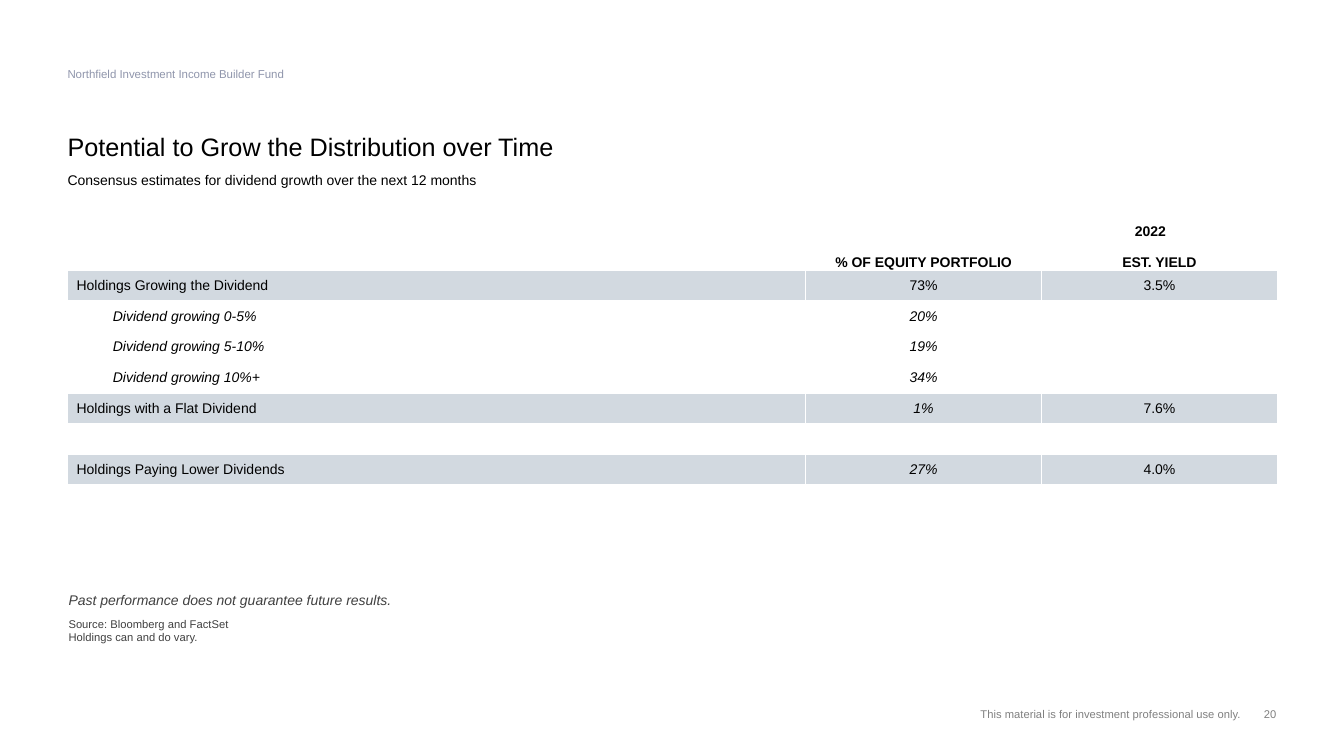
from pptx import Presentation
from pptx.dml.color import RGBColor
from pptx.enum.text import MSO_ANCHOR, PP_ALIGN
from pptx.util import Inches, Pt

TOP, MIDDLE, BOTTOM = MSO_ANCHOR.TOP, MSO_ANCHOR.MIDDLE, MSO_ANCHOR.BOTTOM
LEFT, CENTER, RIGHT = PP_ALIGN.LEFT, PP_ALIGN.CENTER, PP_ALIGN.RIGHT
WIDTH, HEIGHT = 13.33, 7.5
MARGIN = 0.67
BAND, PLAIN = "D2D9E0", "FFFFFF"
BLACK, DARK, GRAY, SLATE = "000000", "404040", "808080", "9096AC"

TEXTS = [
    ("Northfield Investment Income Builder Fund", (MARGIN, 0.67, 4, 0.14), TOP, LEFT, SLATE, {"size": 8.2}),
    ("Potential to Grow the Distribution over Time", (MARGIN, 1.33, 9.34, 0.27), BOTTOM, LEFT, BLACK, {"size": 18}),
    ("Consensus estimates for dividend growth over the next 12 months", (MARGIN, 1.7, 9.34, 0.18), TOP, LEFT, BLACK, {"size": 10}),
    ("Past performance does not guarantee future results.", (0.68, 5.91, 11.56, 0.13), BOTTOM, LEFT, DARK, {"size": 10, "italic": True}),
    ("Source: Bloomberg and FactSet\vHoldings can and do vary.", (0.68, 6.12, 11.56, 0.2), TOP, LEFT, DARK, {"size": 8}),
    ("This material is for investment professional use only.", (6.67, 6.95, 5.64, 0.2), BOTTOM, RIGHT, GRAY, {"size": 8}),
    ("20", (12.3, 6.95, 0.36, 0.2), BOTTOM, RIGHT, GRAY, {"size": 8}),
]

HEADERS = [("", "% OF EQUITY PORTFOLIO", "2022"), ("", "", "EST. YIELD")]
HOLDINGS = [
    ("Holdings Growing the Dividend", "73%", "3.5%"),
    ("Dividend growing 0-5%", "20%", ""),
    ("Dividend growing 5-10%", "19%", ""),
    ("Dividend growing 10%+", "34%", ""),
    ("Holdings with a Flat Dividend", "1%", "7.6%"),
    ("", "", ""),
    ("Holdings Paying Lower Dividends", "27%", "4.0%"),
]
COLUMNS = [7.32, 2.34, 2.34]
ROWS = [0.2, 0.28] + [0.3] * len(HOLDINGS)
TABLE_TOP = 2.18
YEAR_SHIFT = 0.18


def color(value):
    return RGBColor.from_string(value)


def write(text_frame, text, alignment, text_color, formats):
    paragraph = text_frame.paragraphs[0]
    paragraph.text = text
    paragraph.alignment = alignment
    for run in paragraph.runs:
        for name, value in {"name": "Arial", **formats}.items():
            setattr(run.font, name, Pt(value) if name == "size" else value)
        run.font.color.rgb = color(text_color)


def set_margins(target, left=0, right=0):
    target.margin_left, target.margin_right = Inches(left), Inches(right)
    target.margin_top = target.margin_bottom = 0


def add_text(slide, text, box, anchor, alignment, text_color, formats):
    text_frame = slide.shapes.add_textbox(*map(Inches, box)).text_frame
    text_frame.word_wrap = True
    text_frame.vertical_anchor = anchor
    set_margins(text_frame)
    write(text_frame, text, alignment, text_color, formats)


def fill_cell(cell, text, row, column, banded):
    header = row < len(HEADERS)
    left = 0 if column or header else 0.09 if banded else 0.45
    set_margins(cell, left, YEAR_SHIFT if text == "2022" else 0)
    cell.vertical_anchor = BOTTOM if header else MIDDLE
    cell.fill.solid()
    cell.fill.fore_color.rgb = color(BAND if banded else PLAIN)
    if text:
        italic = not header and (not banded or column == 1 and row > len(HEADERS))
        formats = {"size": 10, "bold": header, "italic": italic}
        write(cell.text_frame, text, CENTER if column else LEFT, BLACK, formats)


def add_holdings(slide):
    box = (MARGIN, TABLE_TOP, sum(COLUMNS), sum(ROWS))
    table = slide.shapes.add_table(len(ROWS), len(COLUMNS), *map(Inches, box)).table
    table.first_row = table.horz_banding = False
    for column, width in zip(table.columns, COLUMNS):
        column.width = Inches(width)
    for row, height in zip(table.rows, ROWS):
        row.height = Inches(height)
    for row, values in enumerate(HEADERS + HOLDINGS):
        banded = values[0].startswith("Holdings")
        for column, text in enumerate(values):
            fill_cell(table.cell(row, column), text, row, column, banded)
    for column in (0, 1):
        table.cell(0, column).merge(table.cell(1, column))


def main():
    presentation = Presentation()
    presentation.slide_width, presentation.slide_height = Inches(WIDTH), Inches(HEIGHT)
    slide = presentation.slides.add_slide(presentation.slide_layouts[6])
    add_holdings(slide)
    for text in TEXTS:
        add_text(slide, *text)
    presentation.save("out.pptx")


if __name__ == "__main__":
    main()
